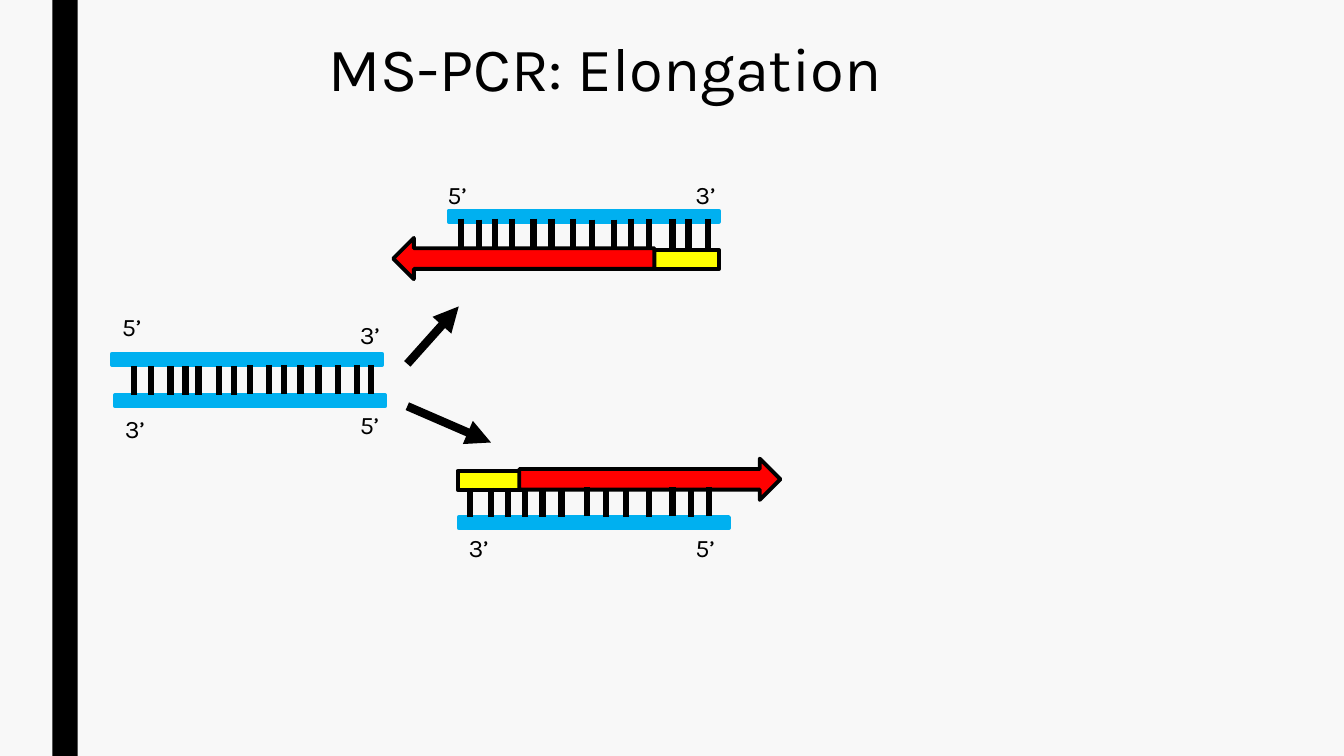
from dataclasses import dataclass

from lxml import etree
from pptx import Presentation
from pptx.dml.color import RGBColor
from pptx.enum import shapes as kinds, text as txt
from pptx.oxml import ns
from pptx.util import Inches, Pt

BACKGROUND = RGBColor(0xF8, 0xF8, 0xF8)
BLACK = RGBColor(0, 0, 0)
STRAND_BLUE = RGBColor(0x00, 0xB0, 0xF0)
PRIMER_YELLOW = RGBColor(0xFF, 0xFF, 0x00)
ELONGATION_RED = RGBColor(0xFF, 0, 0)
FONT = "Karla"
RUNG_HEIGHT = 0.29
RECTANGLE = kinds.MSO_SHAPE.RECTANGLE


@dataclass(frozen=True)
class Block:
    left: float
    top: float
    width: float
    height: float
    fill: RGBColor
    outline: RGBColor | None
    kind: kinds.MSO_SHAPE = RECTANGLE


@dataclass(frozen=True)
class Rungs:
    """Base pairs that share one top edge."""
    top: float
    xs: tuple[float, ...]


@dataclass(frozen=True)
class EndLabel:
    caption: str
    left: float
    top: float


def strand(left: float, top: float) -> Block:
    return Block(left, top, 2.68, 0.11, STRAND_BLUE, STRAND_BLUE)


def primer(left: float, top: float) -> Block:
    return Block(left, top, 0.64, 0.19, PRIMER_YELLOW, BLACK)


def elongation(left: float, top: float, kind: kinds.MSO_SHAPE) -> Block:
    return Block(left, top, 2.59, 0.41, ELONGATION_RED, BLACK, kind)


SIDE_BAR = Block(0.52, 0, 0.25, 7.5, BLACK, None)
BLOCKS = [
    # Template duplex
    strand(1.11, 3.51), strand(1.14, 3.92),
    # Upper product, extended to the left
    strand(4.45, 2.09), primer(6.49, 2.48),
    elongation(3.9, 2.36, kinds.MSO_SHAPE.LEFT_ARROW),
    # Lower product, extended to the right
    strand(4.55, 5.13), primer(4.54, 4.67),
    elongation(5.15, 4.55, kinds.MSO_SHAPE.RIGHT_ARROW),
]
RUNGS = [
    # Template duplex
    Rungs(3.63, (1.33, 1.5, 1.69, 1.84, 1.97, 2.17, 2.32)),
    Rungs(3.62, (2.48, 2.67, 2.82, 2.98, 3.16, 3.35, 3.54, 3.68)),
    # Upper product
    Rungs(2.17, (4.57, 4.91, 5.08, 5.29, 5.47, 5.68, 6.26, 6.44, 6.67, 6.83, 7.02)),
    Rungs(2.18, (4.75, 5.87, 6.09)),
    # Lower product
    Rungs(4.84, (4.66, 4.87, 5.04, 5.21, 5.38, 5.57, 6.01, 6.21, 6.44, 6.85)),
    Rungs(4.83, (5.82, 6.67, 7.03)),
]
END_LABELS = [
    EndLabel("5’", 1.11, 3.04), EndLabel("3’", 3.47, 3.12),
    EndLabel("3’", 1.14, 4.05), EndLabel("5’", 3.47, 4.01),
    EndLabel("5’", 4.34, 1.73), EndLabel("3’", 6.8, 1.73),
    EndLabel("3’", 4.55, 5.23), EndLabel("5’", 6.8, 5.23),
]


def draw_block(slide, block: Block) -> None:
    shape = slide.shapes.add_shape(
        block.kind, Inches(block.left), Inches(block.top),
        Inches(block.width), Inches(block.height))
    shape.shadow.inherit = False
    shape.fill.solid()
    shape.fill.fore_color.rgb = block.fill
    if block.outline is None:
        shape.line.fill.background()
    else:
        shape.line.color.rgb = block.outline
        shape.line.width = Pt(2.75)


def draw_line(slide, start: tuple[float, float], end: tuple[float, float],
              weight: float, arrow: bool = False) -> None:
    line = slide.shapes.add_connector(
        kinds.MSO_CONNECTOR.STRAIGHT, *map(Inches, start + end))
    line.line.color.rgb = BLACK
    line.line.width = Pt(weight)
    if arrow:
        etree.SubElement(line.line._get_or_add_ln(), ns.qn("a:tailEnd"), type="triangle")
    etree.SubElement(line._element.spPr, ns.qn("a:effectLst"))


def add_text(slide, caption: str, left: float, top: float, width: float, height: float,
             *, size: float, spacing: float = 1.0,
             anchor: txt.MSO_ANCHOR = txt.MSO_ANCHOR.TOP,
             fit: txt.MSO_AUTO_SIZE = txt.MSO_AUTO_SIZE.NONE) -> None:
    frame = slide.shapes.add_textbox(
        Inches(left), Inches(top), Inches(width), Inches(height)).text_frame
    frame.word_wrap = True
    frame.auto_size = fit
    frame.vertical_anchor = anchor
    paragraph = frame.paragraphs[0]
    paragraph.line_spacing = spacing
    run = paragraph.add_run()
    run.text = caption
    run.font.name = FONT
    run.font.size = Pt(size)
    run.font.color.rgb = BLACK


def main() -> None:
    deck = Presentation()
    deck.slide_width, deck.slide_height = Inches(13.33), Inches(7.5)
    slide = deck.slides.add_slide(deck.slide_layouts[6])
    slide.background.fill.solid()
    slide.background.fill.fore_color.rgb = BACKGROUND

    # Frame and title
    draw_block(slide, SIDE_BAR)
    add_text(slide, "MS-PCR: Elongation", 3.16, 0.27, 5.97, 0.89,
             size=44, spacing=0.89, anchor=txt.MSO_ANCHOR.MIDDLE)

    # Strands, primers and their extensions
    for block in BLOCKS:
        draw_block(slide, block)

    # Base pairs
    for rungs in RUNGS:
        for x in rungs.xs:
            draw_line(slide, (x, rungs.top), (x, rungs.top + RUNG_HEIGHT), 4.5)

    # From the template to each product
    draw_line(slide, (4.04, 3.61), (4.55, 3.04), 6, arrow=True)
    draw_line(slide, (4.04, 4.03), (4.87, 4.39), 6, arrow=True)

    # Strand ends
    for label in END_LABELS:
        add_text(slide, label.caption, label.left, label.top, 0.43, 0.4,
                 size=18, fit=txt.MSO_AUTO_SIZE.SHAPE_TO_FIT_TEXT)

    deck.save("out.pptx")


if __name__ == "__main__":
    main()
